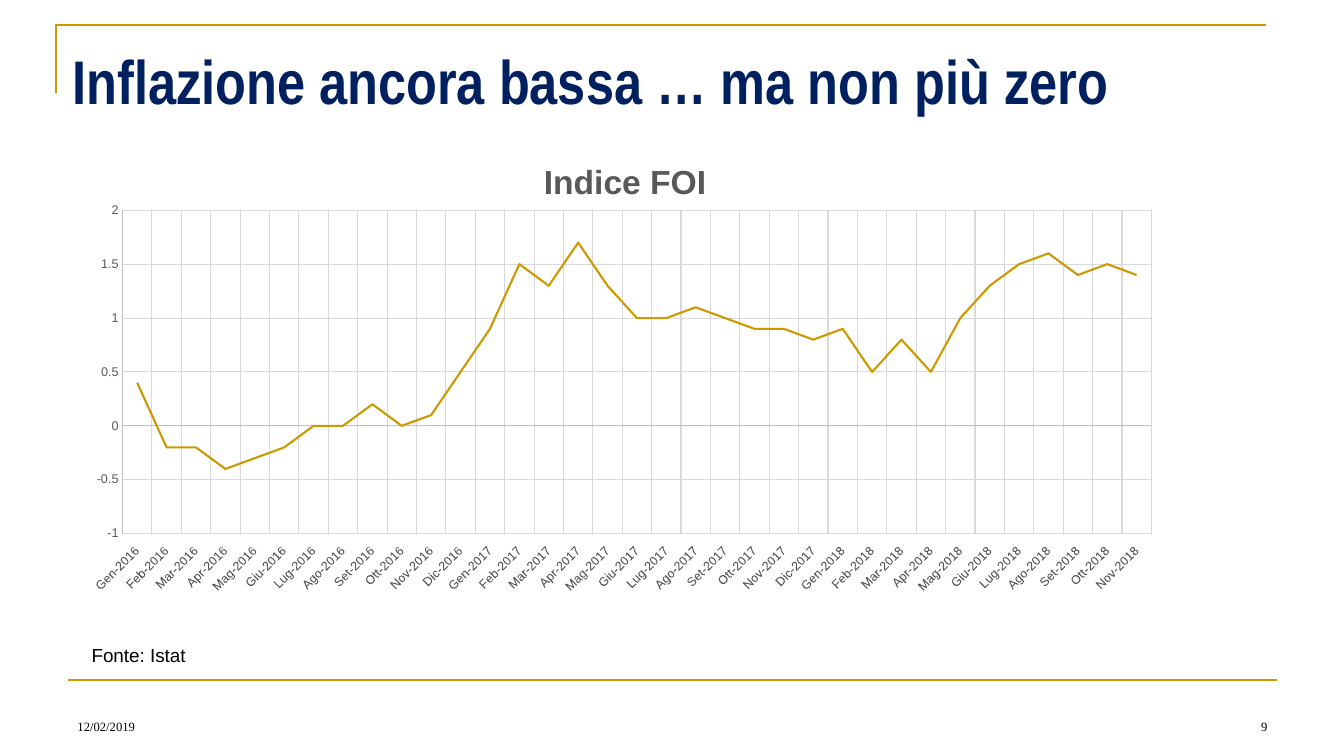
from lxml import etree
from pptx import Presentation
from pptx import util as u
from pptx.chart.data import CategoryChartData
from pptx.dml.color import RGBColor
from pptx.enum import chart as charts, shapes, text
from pptx.oxml import parse_xml
from pptx.oxml.ns import qn

COLORS = {"gold": "CC9900", "navy": "002060", "black": "000000",
          "gray": "595959", "axis": "BFBFBF", "grid": "D9D9D9"}
MONTHS = "Gen Feb Mar Apr Mag Giu Lug Ago Set Ott Nov Dic".split()
FOI_RATES = [0.4, -0.2, -0.2, -0.4, -0.3, -0.2, 0, 0, 0.2, 0, 0.1, 0.5,
             0.9, 1.5, 1.3, 1.7, 1.3, 1, 1, 1.1, 1, 0.9, 0.9, 0.8,
             0.9, 0.5, 0.8, 0.5, 1, 1.3, 1.5, 1.6, 1.4, 1.5, 1.4]
PERIODS = [f"{MONTHS[i % 12]}-{2016 + i // 12}" for i in range(len(FOI_RATES))]
CHART_NS = "http://schemas.openxmlformats.org/drawingml/2006/chart"


def color(name):
    return RGBColor.from_string(COLORS[name])


def style_font(font, size, name="Arial", fill="black", bold=False):
    font.size = u.Pt(size)
    font.name = name
    font.bold = bold
    font.color.rgb = color(fill)


def write(frame, content, align=text.PP_ALIGN.LEFT,
          anchor=text.MSO_ANCHOR.TOP, **font):
    frame.word_wrap = True
    frame.auto_size = text.MSO_AUTO_SIZE.NONE
    frame.vertical_anchor = anchor
    paragraph = frame.paragraphs[0]
    paragraph.alignment = align
    run = paragraph.add_run()
    run.text = content
    style_font(run.font, **font)


def style_line(line, name, width):
    line.color.rgb = color(name)
    line.width = u.Pt(width)


class InflationSlide:
    def __init__(self, presentation):
        self.slide = presentation.slides.add_slide(presentation.slide_layouts[5])
        self.shapes = self.slide.shapes

    def title(self, content, box):
        heading = self.shapes.title
        heading.left, heading.top, heading.width, heading.height = map(u.Inches, box)
        write(heading.text_frame, content, anchor=text.MSO_ANCHOR.MIDDLE,
              size=44, name="Arial Narrow", fill="navy", bold=True)

    def label(self, content, box, **style):
        area = self.shapes.add_textbox(*map(u.Inches, box))
        write(area.text_frame, content, **style)

    def corner(self, points):
        start, *rest = [tuple(map(u.Inches, point)) for point in points]
        builder = self.shapes.build_freeform(*start)
        builder.add_line_segments(rest, close=False)
        frame = builder.convert_to_shape()
        frame.shadow.inherit = False
        frame.fill.background()
        style_line(frame.line, "gold", 1.5)

    def rule(self, start, end):
        divider = self.shapes.add_connector(
            shapes.MSO_CONNECTOR.STRAIGHT, *map(u.Inches, start + end))
        etree.SubElement(divider._element.spPr, qn("a:effectLst"))
        style_line(divider.line, "gold", 1.5)
        effects = divider._element.spPr.find(qn("a:effectLst"))
        divider._element.spPr.append(effects)

    def line_chart(self, heading, periods, rates, box, plot_box):
        data = CategoryChartData()
        data.categories = periods
        data.add_series("Series 1", rates)
        chart = self.shapes.add_chart(
            charts.XL_CHART_TYPE.LINE, *map(u.Inches, box), data).chart
        style_font(chart.font, 10)
        chart.has_legend = False
        chart.has_title = True
        write_title = chart.chart_title.text_frame.paragraphs[0].add_run()
        write_title.text = heading
        style_font(write_title.font, 24, fill="gray", bold=True)
        chart.chart_title.include_in_layout = False

        for axis in (chart.category_axis, chart.value_axis):
            axis.major_tick_mark = charts.XL_TICK_MARK.NONE
            axis.minor_tick_mark = charts.XL_TICK_MARK.NONE
            axis.has_major_gridlines = True
            style_line(axis.major_gridlines.format.line, "grid", 0.75)
            style_line(axis.format.line, "axis", 0.75)
            style_font(axis.tick_labels.font, 9, fill="gray")
        chart.category_axis.tick_label_position = charts.XL_TICK_LABEL_POSITION.LOW
        label_body = chart.category_axis._element.find(qn("c:txPr")).find(qn("a:bodyPr"))
        label_body.set("rot", "-2700000")
        chart.value_axis.minimum_scale = -1
        chart.value_axis.maximum_scale = 2
        chart.value_axis.major_unit = 0.5
        chart.value_axis.tick_labels.number_format = "General"
        chart.value_axis.tick_labels.number_format_is_linked = False

        plot = chart.plots[0]
        plot.vary_by_categories = False
        foi = plot.series[0]
        foi.smooth = False
        foi.marker.style = charts.XL_MARKER_STYLE.NONE
        style_line(foi.format.line, "gold", 1.5)
        self.place_plot(chart, plot_box)

    def place_plot(self, chart, plot_box):
        area = chart._chartSpace.chart.plotArea
        for layout in area.findall(qn("c:layout")):
            area.remove(layout)
        modes = '<c:xMode val="edge"/><c:yMode val="edge"/>'
        sizes = "".join(f'<c:{key} val="{value}"/>' for key, value in zip("xywh", plot_box))
        area.insert(0, parse_xml(
            f'<c:layout xmlns:c="{CHART_NS}"><c:manualLayout>'
            f'<c:layoutTarget val="inner"/>{modes}{sizes}'
            '</c:manualLayout></c:layout>'))


def main():
    presentation = Presentation()
    presentation.slide_width = u.Inches(13.33)
    presentation.slide_height = u.Inches(7.5)
    page = InflationSlide(presentation)
    page.corner([(0.56, 0.92), (0.56, 0.25), (12.56, 0.25)])
    page.rule((0.67, 6.75), (12.67, 6.75))
    footer = {"anchor": text.MSO_ANCHOR.BOTTOM, "size": 9, "name": "Times New Roman"}
    page.label("9", (9.56, 6.83, 3.11, 0.5), align=text.PP_ALIGN.RIGHT, **footer)
    page.label("12/02/2019", (0.67, 6.83, 3.11, 0.5), **footer)
    page.label("Fonte: Istat", (0.81, 6.34, 5.4, 0.33), size=13.5)
    page.line_chart("Indice FOI", PERIODS, FOI_RATES,
                    (0.84, 1.39, 10.72, 4.5), (0.035, 0.156, 0.952, 0.718))
    page.title("Inflazione ancora bassa … ma non più zero", (0.62, 0.32, 11.75, 0.94))
    presentation.save("out.pptx")


if __name__ == "__main__":
    main()
